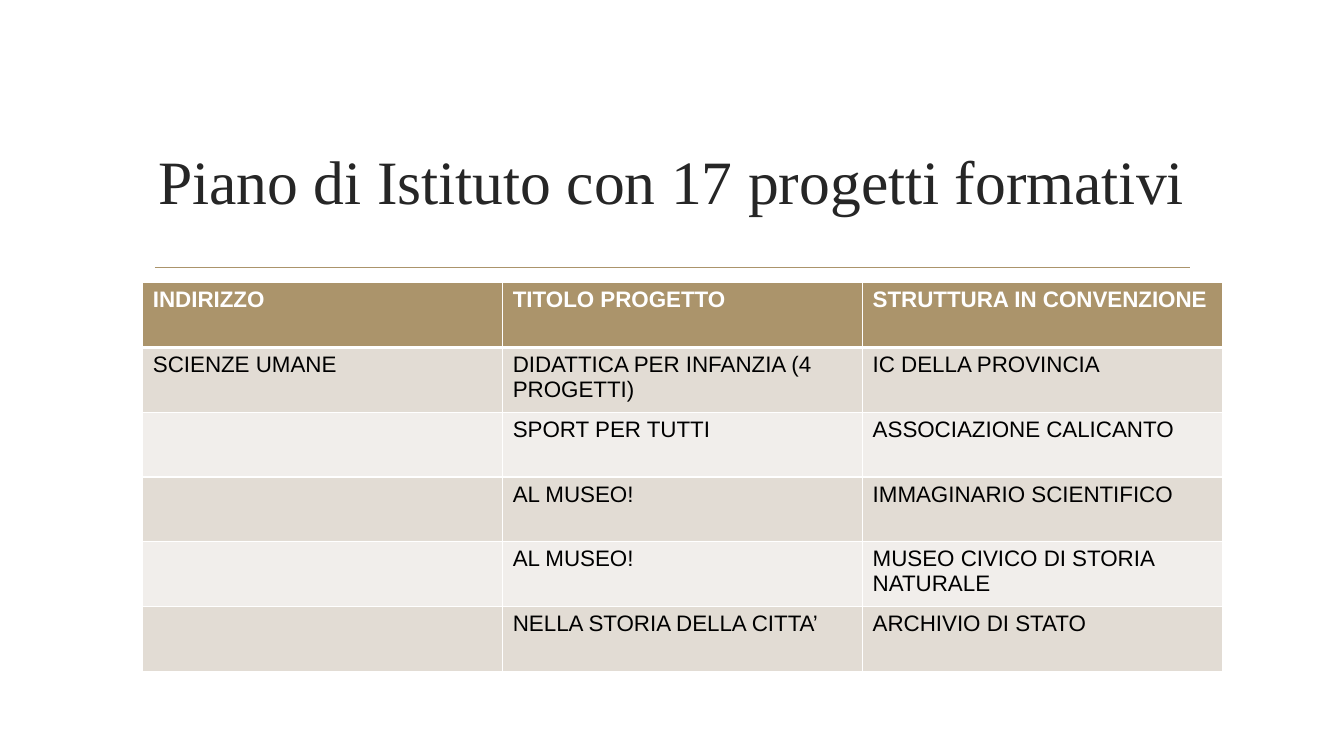
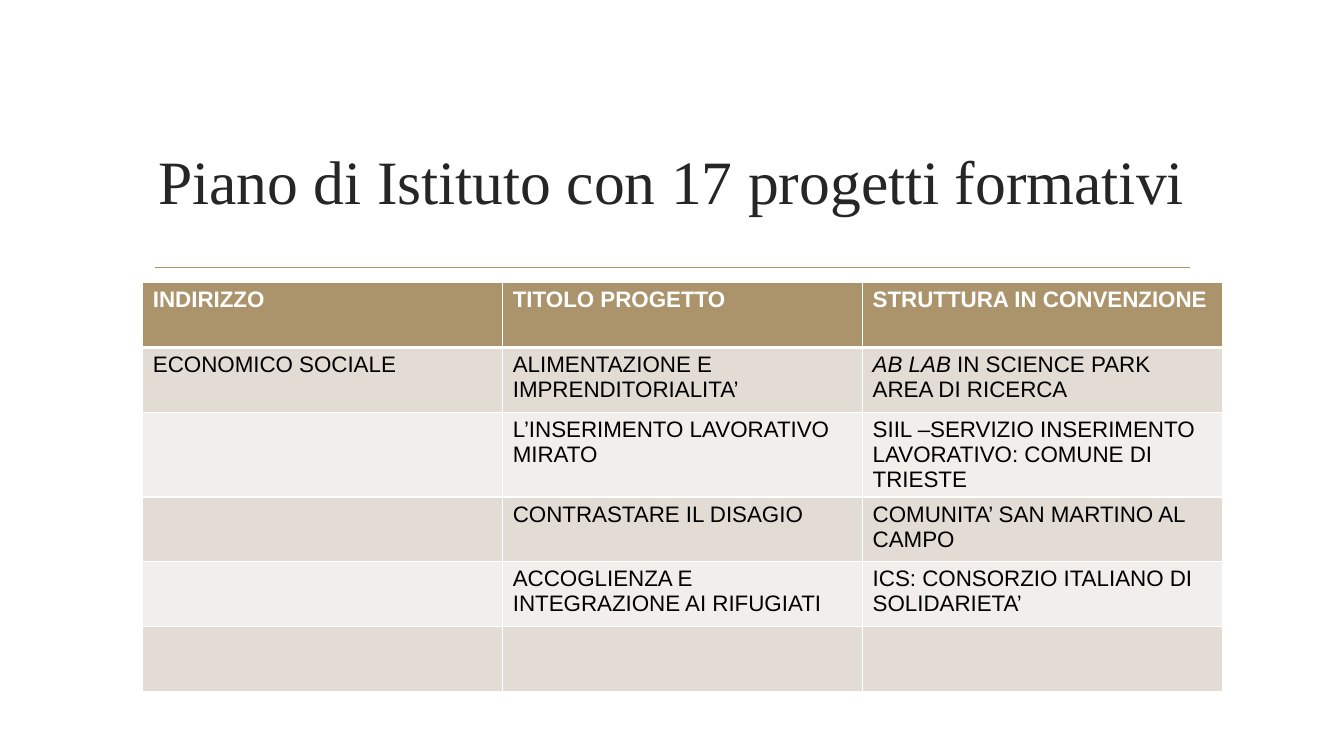
import dataclasses

import lxml.etree
import pptx
import pptx.dml.color
import pptx.enum.shapes
import pptx.enum.text
import pptx.oxml.ns
import pptx.util

Cm = pptx.util.Cm
Pt = pptx.util.Pt


@dataclasses.dataclass(frozen=True)
class Theme:
    gold: str = "AB946B"
    ink: str = "262626"
    black: str = "000000"
    white: str = "FFFFFF"
    bands: tuple = ("E2DCD4", "F1EEEB")
    serif: str = "Times New Roman"
    sans: str = "Arial"
    head: float = 44
    body: float = 16
    rule: float = 1.25
    thin: float = 1
    thick: float = 3


THEME = Theme()
TITLE = "Piano di Istituto con 17 progetti formativi"
HEADS = ("INDIRIZZO", "TITOLO PROGETTO", "STRUTTURA IN CONVENZIONE")
PLANS = (
    (
        ("SCIENZE UMANE", "DIDATTICA PER INFANZIA (4 PROGETTI)", "IC DELLA PROVINCIA"),
        ("", "SPORT PER TUTTI", "ASSOCIAZIONE CALICANTO"),
        ("", "AL MUSEO!", "IMMAGINARIO SCIENTIFICO"),
        ("", "AL MUSEO!", "MUSEO CIVICO DI STORIA NATURALE"),
        ("", "NELLA STORIA DELLA CITTA’", "ARCHIVIO DI STATO"),
    ),
    (
        ("ECONOMICO SOCIALE", "ALIMENTAZIONE E IMPRENDITORIALITA’",
         (("AB LAB ", True), ("IN SCIENCE PARK AREA DI RICERCA", False))),
        ("", "L’INSERIMENTO LAVORATIVO MIRATO",
         "SIIL –SERVIZIO INSERIMENTO LAVORATIVO: COMUNE DI TRIESTE"),
        ("", "CONTRASTARE IL DISAGIO", "COMUNITA’ SAN MARTINO AL CAMPO"),
        ("", "ACCOGLIENZA E INTEGRAZIONE AI RIFUGIATI",
         "ICS: CONSORZIO ITALIANO DI SOLIDARIETA’"),
        ("", "", ""),
    ),
)


def tint(code):
    return pptx.dml.color.RGBColor.from_string(code)


def write(frame, text, font=THEME.sans, size=THEME.body, color=THEME.black,
          bold=False, align=None):
    par = frame.paragraphs[0]
    par.alignment = align
    par.font.size = Pt(size)
    parts = ((text, False),) if isinstance(text, str) else text
    for words, slant in parts:
        if words:
            run = par.add_run()
            run.text = words
            run.font.name = font
            run.font.size = Pt(size)
            run.font.bold = bold
            run.font.italic = slant
            run.font.color.rgb = tint(color)


def edge(cell, top, base):
    props = cell._tc.get_or_add_tcPr()
    widths = {"L": THEME.thin, "R": THEME.thin, "T": top, "B": base}
    for side, width in widths.items():
        line = lxml.etree.SubElement(
            props, pptx.oxml.ns.qn("a:ln" + side), w=str(Pt(width)))
        fill = lxml.etree.SubElement(line, pptx.oxml.ns.qn("a:solidFill"))
        lxml.etree.SubElement(fill, pptx.oxml.ns.qn("a:srgbClr"), val=THEME.white)


def add_title(slide, box):
    title = slide.shapes.title
    title.left, title.top, title.width, title.height = box
    frame = title.text_frame
    frame.word_wrap = True
    frame.auto_size = pptx.enum.text.MSO_AUTO_SIZE.NONE
    frame.vertical_anchor = pptx.enum.text.MSO_ANCHOR.MIDDLE
    write(frame, TITLE, font=THEME.serif, size=THEME.head, color=THEME.ink,
          align=pptx.enum.text.PP_ALIGN.CENTER)


def add_rule(slide, box):
    left, top, width = box
    line = slide.shapes.add_connector(
        pptx.enum.shapes.MSO_CONNECTOR.STRAIGHT, left, top, left + width, top)
    line.line.color.rgb = tint(THEME.gold)
    line.line.width = Pt(THEME.rule)
    lxml.etree.SubElement(line.element.spPr, pptx.oxml.ns.qn("a:effectLst"))
    slide.slide_layout.shapes.element.append(line.element)


def add_grid(slide, rows, box):
    lines = (HEADS, *rows)
    grid = slide.shapes.add_table(len(lines), len(HEADS), *box).table
    grid.horz_banding = False
    for r, line in enumerate(lines):
        head = r == 0
        for c, text in enumerate(line):
            cell = grid.cell(r, c)
            edge(cell, THEME.thick if r == 1 else THEME.thin,
                 THEME.thick if head else THEME.thin)
            cell.fill.solid()
            cell.fill.fore_color.rgb = tint(
                THEME.gold if head else THEME.bands[(r - 1) % 2])
            write(cell.text_frame, text, bold=head,
                  color=THEME.white if head else THEME.black)


def add_plan(deck, layout, rows):
    slide = deck.slides.add_slide(layout)
    add_title(slide, (Cm(3.6), Cm(2.72), Cm(26.67), Cm(3.63)))
    add_grid(slide, rows, (Cm(3.6), Cm(7.12), Cm(27.21), Cm(9.8)))
    return slide


def main():
    deck = pptx.Presentation()
    deck.slide_width, deck.slide_height = Cm(33.87), Cm(19.05)
    layout = deck.slide_layouts.get_by_name("Title Only")
    slides = [add_plan(deck, layout, rows) for rows in PLANS]
    add_rule(slides[0], (Cm(3.9), Cm(6.74), Cm(26.1)))
    deck.save("out.pptx")


if __name__ == "__main__":
    main()
